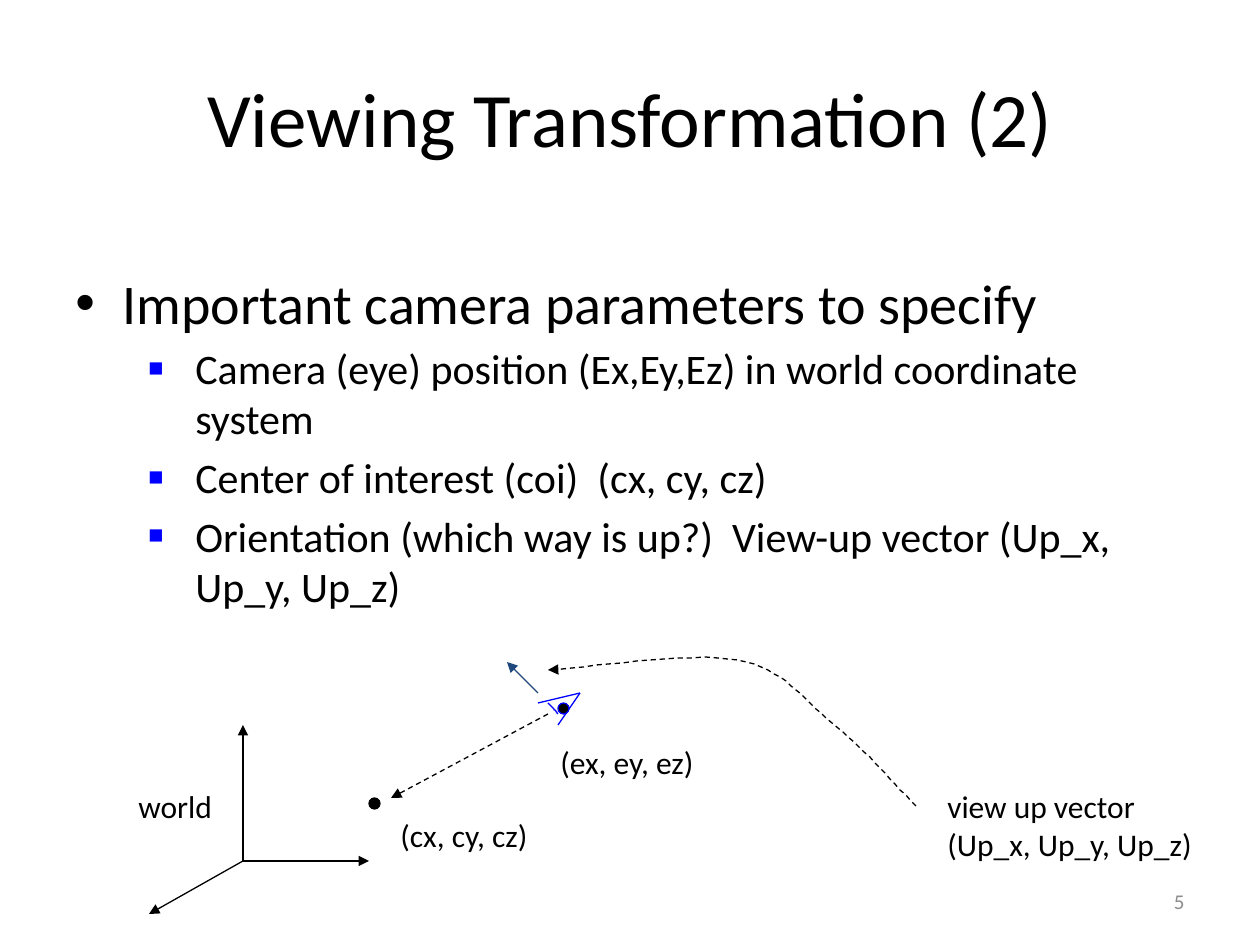
from lxml import etree
from pptx import Presentation
from pptx import util as u
from pptx.dml.color import RGBColor
from pptx.enum import dml, shapes, text
from pptx.oxml.ns import qn

EMU_PER_PX = 914400 / 126
FONT = "Calibri"
COLORS = {"ink": "000000", "eye": "0000FF", "up": "1F497D", "number": "8C8C8C"}
BULLET_INDENT = 47
DOT = 11


def px(value):
    return u.Emu(round(value * EMU_PER_PX))


def rgb(name):
    return RGBColor.from_string(COLORS[name])


def add_xml(parent, tag, **attributes):
    return etree.SubElement(parent, qn(tag), **attributes)


def add_bullet(paragraph, char, color=None, percent=100):
    properties = paragraph._p.get_or_add_pPr()
    indent = px(BULLET_INDENT)
    properties.set("marL", str(indent))
    properties.set("indent", str(-indent))
    if color:
        add_xml(add_xml(properties, "a:buClr"), "a:srgbClr", val=COLORS[color])
    add_xml(properties, "a:buSzPct", val=str(percent * 1000))
    add_xml(properties, "a:buFont", typeface="Arial")
    add_xml(properties, "a:buChar", char=char)


def add_text(slide, lines, box, size=18, color="ink", align="LEFT",
             anchor="TOP", wrap=True, space_before=0, bullet=None):
    """Add one paragraph per line; bullet holds the arguments of add_bullet."""
    frame = slide.shapes.add_textbox(*map(px, box)).text_frame
    frame.word_wrap = wrap
    frame.vertical_anchor = text.MSO_ANCHOR[anchor]
    for i, line in enumerate(lines):
        paragraph = frame.add_paragraph() if i else frame.paragraphs[0]
        paragraph.alignment = text.PP_ALIGN[align]
        paragraph.space_before = u.Pt(space_before)
        if bullet:
            add_bullet(paragraph, **bullet)
        run = paragraph.add_run()
        run.text = line
        run.font.name = FONT
        run.font.size = u.Pt(size)
        run.font.color.rgb = rgb(color)


def style_line(shape, color, dashed=False, arrow=False):
    shape.line.color.rgb = rgb(color)
    shape.line.width = u.Pt(0.75)
    if dashed:
        shape.line.dash_style = dml.MSO_LINE.DASH
    if arrow:
        add_xml(shape.line._get_or_add_ln(), "a:tailEnd", type="triangle")


def add_line(slide, start, end, color="ink", **style):
    line = slide.shapes.add_connector(
        shapes.MSO_CONNECTOR.STRAIGHT, *map(px, (*start, *end)))
    style_line(line, color, **style)
    add_xml(line._element.spPr, "a:effectLst")


def bezier(points, t):
    """Point at t on the curve, by repeated interpolation."""
    while len(points) > 1:
        points = [tuple(a + (b - a) * t for a, b in zip(p, q))
                  for p, q in zip(points, points[1:])]
    return points[0]


def add_curve(slide, controls, color="ink", steps=16, **style):
    """Draw joined cubic curves; each shares its end with the next start."""
    points = [bezier(controls[i:i + 4], step / steps)
              for i in range(0, len(controls) - 1, 3)
              for step in range(1, steps + 1)]
    builder = slide.shapes.build_freeform(*controls[0], scale=EMU_PER_PX)
    builder.add_line_segments(points, close=False)
    curve = builder.convert_to_shape()
    curve.shadow.inherit = False
    curve.fill.background()
    style_line(curve, color, **style)


def add_dot(slide, left, top, outline="ink"):
    dot = slide.shapes.add_shape(
        shapes.MSO_SHAPE.OVAL, *map(px, (left, top, DOT, DOT)))
    dot.shadow.inherit = False
    dot.fill.solid()
    dot.fill.fore_color.rgb = rgb("ink")
    style_line(dot, outline)


def add_world_axes(slide):
    origin = (243, 861)
    for tip in ((243, 725), (369, 861), (149, 914)):
        add_line(slide, origin, tip, arrow=True)
    add_text(slide, ["world"], (126, 781, 102, 50), wrap=False)


def add_eye(slide):
    corner = (580, 693)
    for lid in ((538, 703), (558, 725)):
        add_line(slide, corner, lid, "eye")
    add_curve(slide, [(548, 703), (553, 708), (557, 712), (558, 714)], "eye")
    add_dot(slide, 558, 703, outline="eye")
    add_text(slide, ["(ex, ey, ez)"], (548, 737, 184, 50), wrap=False)


def add_center_of_interest(slide):
    add_dot(slide, 369, 798)
    add_text(slide, ["(cx, cy, cz)"], (388, 810, 176, 50), wrap=False)
    add_line(slide, (548, 714), (391, 798), dashed=True, arrow=True)


def add_up_vector(slide):
    add_line(slide, (538, 693), (507, 662), "up", arrow=True)
    add_curve(slide, [(916, 806), (888, 777), (862, 747), (832, 723),
                      (801, 698), (785, 669), (737, 660),
                      (690, 651), (580, 669), (548, 670)],
              dashed=True, arrow=True)
    add_text(slide, ["view up vector", "(Up_x, Up_y, Up_z)"],
             (935, 781, 300, 88), wrap=False)


def main():
    deck = Presentation()
    deck.slide_width, deck.slide_height = px(1260), px(945)
    slide = deck.slides.add_slide(deck.slide_layouts[6])

    add_text(slide, ["Viewing Transformation (2)"], (63, 38, 1134, 158),
             size=44, align="CENTER", anchor="MIDDLE")
    add_text(slide, ["Important camera parameters to specify"],
             (63, 262, 1071, 567), size=32, space_before=6.4,
             bullet={"char": "•"})
    add_text(slide, ["5"], (903, 876, 294, 50), size=12, color="number",
             align="RIGHT", anchor="MIDDLE")
    add_text(slide,
             ["Camera (eye) position (Ex,Ey,Ez) in world coordinate system",
              "Center of interest (coi)  (cx, cy, cz)",
              "Orientation (which way is up?)  View-up vector "
              "(Up_x, Up_y, Up_z)"],
             (136, 336, 1071, 567), size=24, space_before=4.8,
             bullet={"char": "■", "color": "eye", "percent": 60})

    add_world_axes(slide)
    add_eye(slide)
    add_center_of_interest(slide)
    add_up_vector(slide)
    deck.save("out.pptx")


if __name__ == "__main__":
    main()
